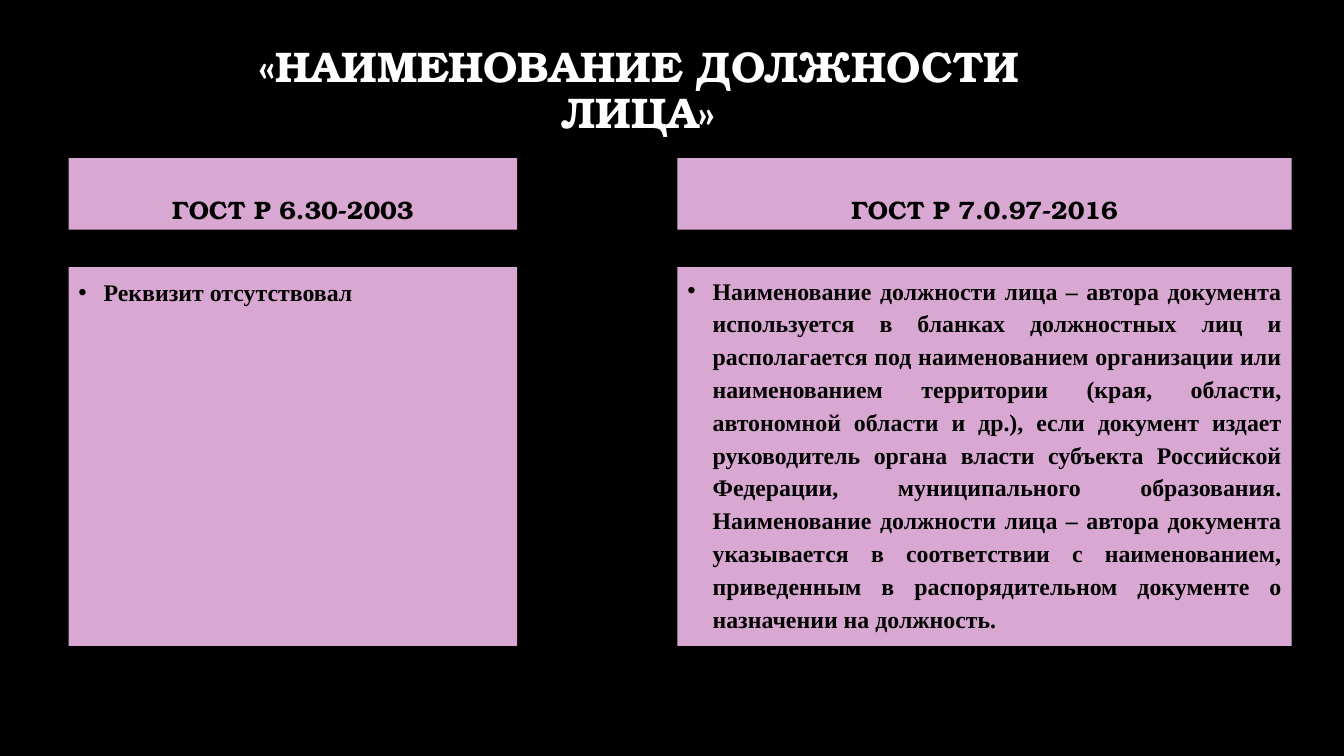
from lxml import etree
from pptx import Presentation
from pptx.dml.color import RGBColor
from pptx.enum.shapes import MSO_SHAPE
from pptx.enum.text import MSO_ANCHOR, PP_ALIGN
from pptx.oxml.ns import qn
from pptx.util import Inches, Pt

RECTANGLE = MSO_SHAPE.RECTANGLE
TOP, MIDDLE, BOTTOM = MSO_ANCHOR.TOP, MSO_ANCHOR.MIDDLE, MSO_ANCHOR.BOTTOM
LEFT, CENTER, JUSTIFY = PP_ALIGN.LEFT, PP_ALIGN.CENTER, PP_ALIGN.JUSTIFY

COLORS = {"background": "000000", "panel": "D9A8D2", "title": "FFFFFF", "text": "000000"}
HEADING_FONT = "TeX Gyre Bonum"
BODY_FONT = "Times New Roman"

TITLE_AREA = (13.13, 7.07, 68.79, 10.13)
HEADER_ROW = (20.93, 9.47)
BODY_ROW = (35.33, 50.13)

STANDARDS = [
    {
        "column": (5.1, 33.38),
        "header": "ГОСТ Р 6.30-2003",
        "body": "Реквизит отсутствовал",
        "align": LEFT,
        "spacing": 1.2,
    },
    {
        "column": (50.41, 45.69),
        "header": "ГОСТ Р 7.0.97-2016",
        "body": (
            "Наименование должности лица – автора документа используется в бланках "
            "должностных лиц и располагается под наименованием организации или "
            "наименованием территории (края, области, автономной области и др.), "
            "если документ издает руководитель органа власти субъекта Российской "
            "Федерации, муниципального образования. Наименование должности лица – "
            "автора документа указывается в соответствии с наименованием, "
            "приведенным в распорядительном документе о назначении на должность."
        ),
        "align": JUSTIFY,
        "spacing": 1.15,
    },
]


class ComparisonSlide:
    def __init__(self, deck):
        self.deck = deck
        self.page = deck.slides.add_slide(deck.slide_layouts[6])
        fill = self.page.background.fill
        fill.solid()
        fill.fore_color.rgb = self.color("background")

    def color(self, name):
        return RGBColor.from_string(COLORS[name])

    def place(self, left, top, width, height):
        across, down = self.deck.slide_width, self.deck.slide_height
        shares = ((left, across), (top, down), (width, across), (height, down))
        return [round(share * length / 100) for share, length in shares]

    def set_text(self, box, text, font, size, color, anchor, align, spacing=1.0):
        frame = box.text_frame
        frame.word_wrap = True
        frame.vertical_anchor = anchor
        para = frame.paragraphs[0]
        para.text = text
        para.alignment = align
        para.line_spacing = spacing
        para.font.name = font
        para.font.size = Pt(size)
        para.font.bold = True
        para.font.color.rgb = self.color(color)
        return para

    def title(self, text):
        box = self.page.shapes.add_textbox(*self.place(*TITLE_AREA))
        self.set_text(box, text, HEADING_FONT, 30.6, "title", MIDDLE, CENTER, 0.9)

    def panel(self, column, row):
        (left, width), (top, height) = column, row
        box = self.page.shapes.add_shape(RECTANGLE, *self.place(left, top, width, height))
        box.shadow.inherit = False
        box.fill.solid()
        box.fill.fore_color.rgb = self.color("panel")
        box.line.fill.background()
        return box

    def header(self, column, text):
        box = self.panel(column, HEADER_ROW)
        self.set_text(box, text, HEADING_FONT, 18, "text", BOTTOM, CENTER)

    def body(self, column, text, align, spacing):
        box = self.panel(column, BODY_ROW)
        para = self.set_text(box, text, BODY_FONT, 17, "text", TOP, align, spacing)
        self.bullet(para)

    def bullet(self, para):
        properties = para._p.get_or_add_pPr()
        indent = Inches(0.25)
        properties.set("marL", str(indent))
        properties.set("indent", str(-indent))
        line_spacing = properties.find(qn("a:lnSpc"))
        font = etree.Element(qn("a:buFont"), typeface="Arial")
        mark = etree.Element(qn("a:buChar"), char="•")
        line_spacing.addnext(font)
        font.addnext(mark)


def main():
    deck = Presentation()
    deck.slide_width, deck.slide_height = Inches(13.33), Inches(7.5)
    slide = ComparisonSlide(deck)
    slide.title("«НАИМЕНОВАНИЕ ДОЛЖНОСТИ ЛИЦА»")
    for standard in STANDARDS:
        slide.body(standard["column"], standard["body"], standard["align"], standard["spacing"])
    for standard in STANDARDS:
        slide.header(standard["column"], standard["header"])
    deck.save("out.pptx")


if __name__ == "__main__":
    main()
